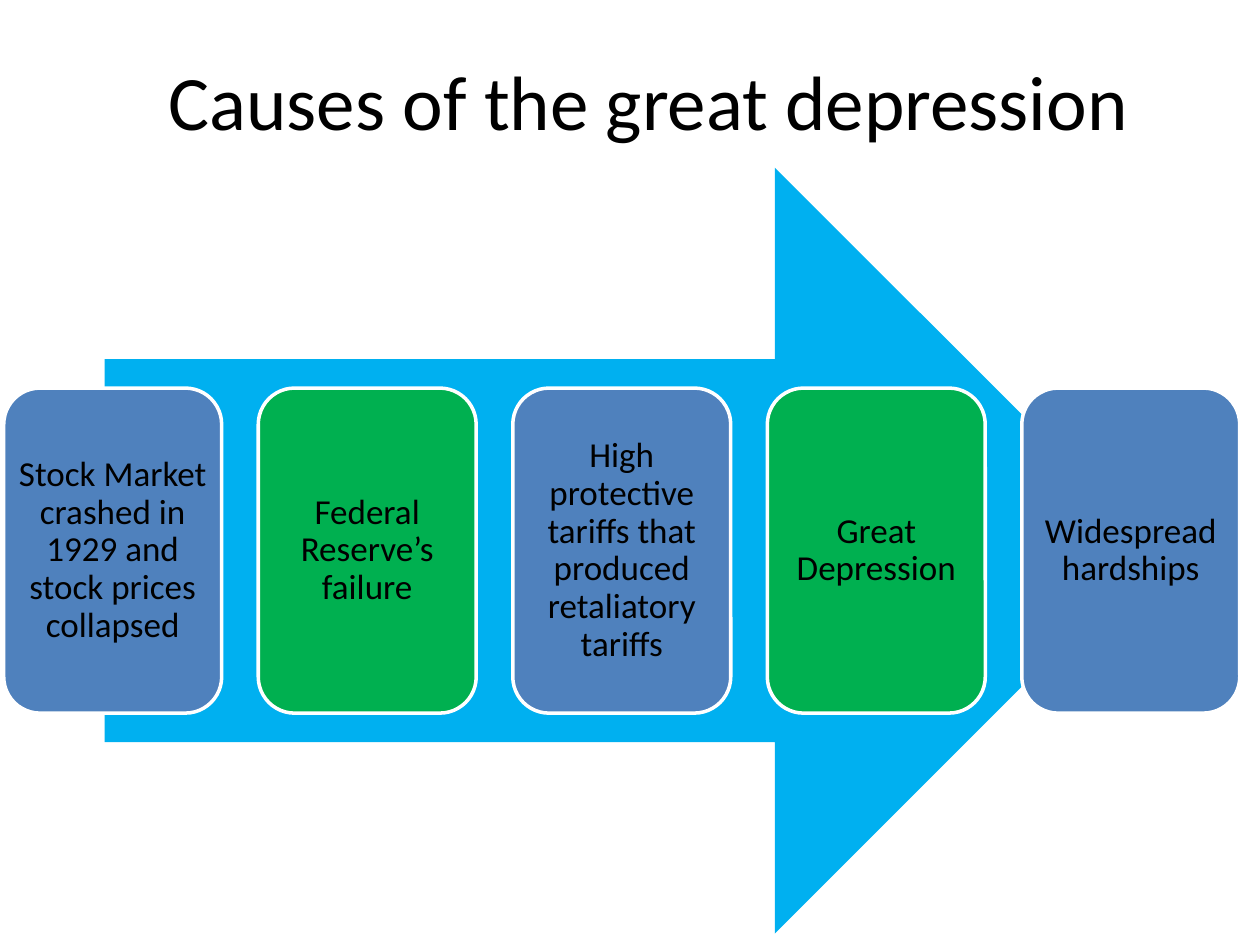
from typing import NamedTuple

from pptx import Presentation
from pptx.dml.color import RGBColor
from pptx.enum.shapes import MSO_SHAPE as Shape
from pptx.enum.text import MSO_ANCHOR as Anchor, PP_ALIGN as Align
from pptx.util import Inches, Pt

BLACK = RGBColor(0x00, 0x00, 0x00)
WHITE = RGBColor(0xFF, 0xFF, 0xFF)
SKY = RGBColor(0x00, 0xB0, 0xF0)
BLUE = RGBColor(0x4F, 0x81, 0xBD)
GREEN = RGBColor(0x00, 0xB0, 0x50)

FIRST_LEFT, CARD_TOP = 0.03, 3.08
CARD_WIDTH, CARD_HEIGHT = 1.73, 2.58
COLUMN_STEP = 2.02


class Card(NamedTuple):
    text: str
    fill: RGBColor


CARDS = [
    Card("Stock Market crashed in 1929 and stock prices collapsed", BLUE),
    Card("Federal Reserve’s failure", GREEN),
    Card("High protective tariffs that produced retaliatory tariffs", BLUE),
    Card("Great Depression", GREEN),
    Card("Widespread hardships", BLUE),
]


def write(tf, text: str, size: int) -> None:
    """Put one centred paragraph in the middle of a text frame."""
    tf.word_wrap = True
    tf.vertical_anchor = Anchor.MIDDLE
    p = tf.paragraphs[0]
    p.alignment = Align.CENTER
    r = p.add_run()
    r.text = text
    for name, value in {"name": "Calibri", "size": Pt(size)}.items():
        setattr(r.font, name, value)
    r.font.color.rgb = BLACK


def add_filled(s, kind: Shape, box: tuple, fill: RGBColor):
    sp = s.shapes.add_shape(kind, *map(Inches, box))
    sp.shadow.inherit = False
    sp.fill.solid()
    sp.fill.fore_color.rgb = fill
    return sp


def add_card(s, column: int, card: Card) -> None:
    left = FIRST_LEFT + column * COLUMN_STEP
    box = (left, CARD_TOP, CARD_WIDTH, CARD_HEIGHT)
    sp = add_filled(s, Shape.ROUNDED_RECTANGLE, box, card.fill)
    sp.line.color.rgb = WHITE
    sp.line.width = Pt(2)
    tf = sp.text_frame
    # The rounded corners already inset the text.
    for side in ("left", "top", "right", "bottom"):
        setattr(tf, f"margin_{side}", 0)
    write(tf, card.text, 20)
    tf.paragraphs[0].line_spacing = 0.9


def main() -> None:
    prs = Presentation()
    prs.slide_width, prs.slide_height = Inches(10), Inches(7.5)
    s = prs.slides.add_slide(prs.slide_layouts[5])

    title = s.shapes.title
    frame = {"left": 0.58, "top": 0.17, "width": 9, "height": 1.25}
    for name, value in frame.items():
        setattr(title, name, Inches(value))
    write(title.text_frame, " Causes of the great depression", 44)

    arrow = add_filled(s, Shape.RIGHT_ARROW, (0.83, 1.33, 8.36, 6.08), SKY)
    arrow.line.fill.background()
    for column, card in enumerate(CARDS):
        add_card(s, column, card)

    prs.save("out.pptx")


if __name__ == "__main__":
    main()
